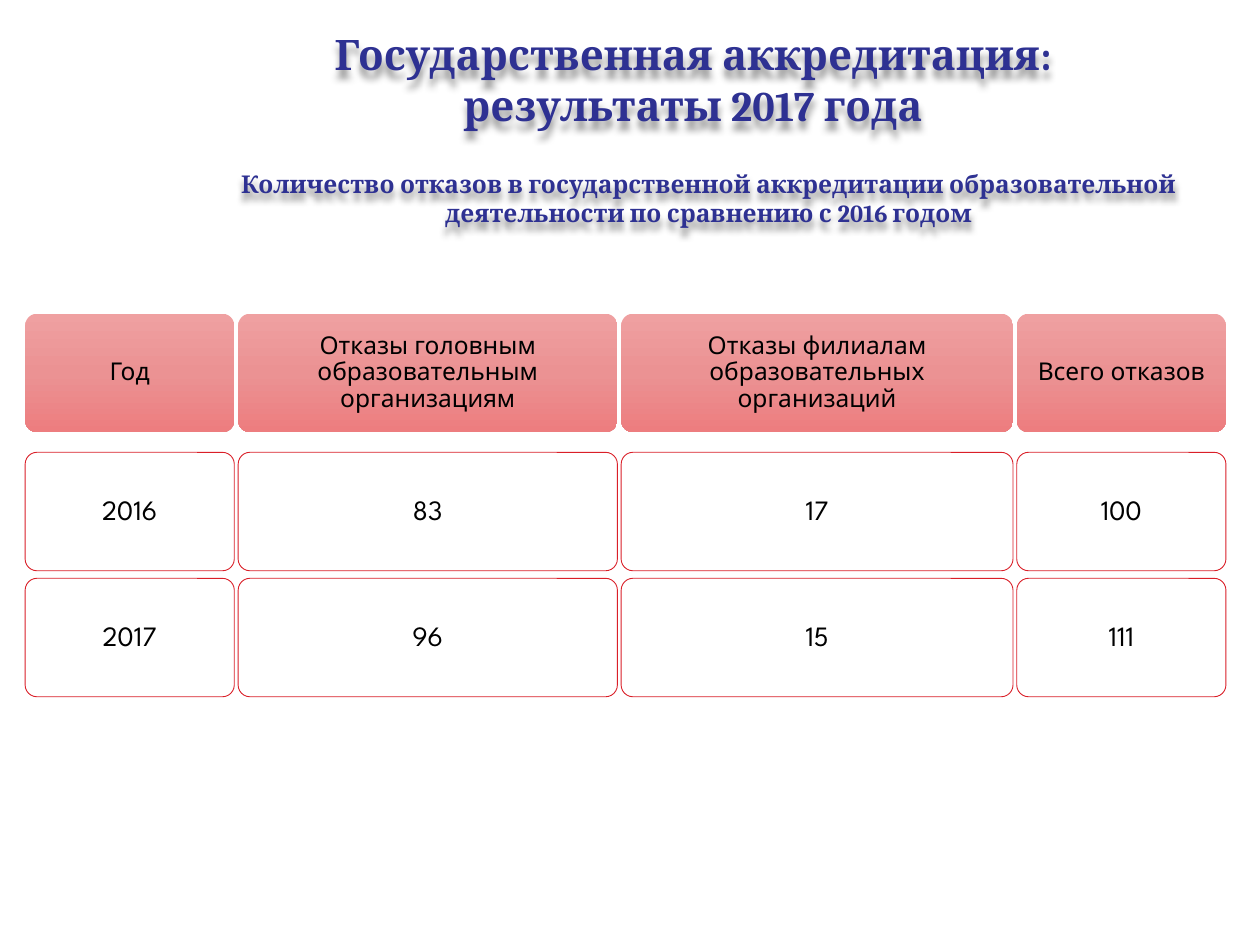
"""Build a slide comparing accreditation refusals in 2016 and 2017."""
import copy

import pptx
import pptx.dml.color
import pptx.enum.shapes
import pptx.enum.text
import pptx.oxml
import pptx.oxml.ns
import pptx.util

TITLE = "Государственная аккредитация: результаты 2017 года"
SUBTITLE = ("Количество отказов в государственной аккредитации образовательной "
            "деятельности по сравнению с 2016 годом")
HEADERS = ["Год", "Отказы головным образовательным организациям",
           "Отказы филиалам образовательных организаций", "Всего отказов"]
RECORDS = [["2016", "83", "17", "100"], ["2017", "96", "15", "111"]]

COLUMN_WIDTHS = [1.66, 3.01, 3.11, 1.66]
COLUMN_GAP = 0.03
GRID_LEFT = 0.2
ROW_TOPS = [2.49, 3.59, 4.59]
ROW_HEIGHT = 0.94
HEADER_STOPS = ["EFA0A1", "EB9293", "ED7D7F"]
NAVY, RED, WHITE, BLACK = "2E3192", "DA1F28", "FFFFFF", "000000"
HEADING_FONT, CELL_FONT = "Cambria", "League Spartan"
DRAWING = 'xmlns:a="http://schemas.openxmlformats.org/drawingml/2006/main"'
HEADING_SHADOW = (
    f'<a:effectLst {DRAWING}><a:outerShdw blurRad="50800" dist="50800" dir="5400000" '
    'algn="t" rotWithShape="0"><a:srgbClr val="000000"><a:alpha val="43000"/></a:srgbClr>'
    '</a:outerShdw></a:effectLst>')


def rgb(value):
    """Turn a hex string into a colour."""
    return pptx.dml.color.RGBColor.from_string(value)


def place(box, left, top, width, height):
    """Position a shape in inches."""
    box.left, box.top, box.width, box.height = map(
        pptx.util.Inches, (left, top, width, height))


def write(box, text, size, font, color, bold=False):
    """Fill a box with one centred run."""
    box.text_frame.word_wrap = True
    para = box.text_frame.paragraphs[0]
    para.alignment = pptx.enum.text.PP_ALIGN.CENTER
    span = para.add_run()
    span.text = text
    span.font.size = pptx.util.Pt(size)
    span.font.name = font
    span.font.bold = bold
    span.font.color.rgb = rgb(color)


def write_heading(box, text, size):
    """Write a bold heading with a soft shadow."""
    write(box, text, size, HEADING_FONT, NAVY, bold=True)
    box.text_frame.vertical_anchor = pptx.enum.text.MSO_ANCHOR.TOP
    box.text_frame.auto_size = pptx.enum.text.MSO_AUTO_SIZE.SHAPE_TO_FIT_TEXT
    box.fill.background()
    box.line.fill.background()
    box._element.spPr.append(pptx.oxml.parse_xml(HEADING_SHADOW))


def paint_header(cell):
    """Give a header cell its three-stop vertical gradient."""
    cell.fill.gradient()
    cell.fill.gradient_angle = 270
    stops = cell._element.spPr.find(".//" + pptx.oxml.ns.qn("a:gsLst"))
    stops.insert(1, copy.deepcopy(stops[0]))
    for index, (stop, color) in enumerate(zip(cell.fill.gradient_stops, HEADER_STOPS)):
        stop.position = index / 2
        stop.color.rgb = rgb(color)
    cell.line.fill.background()


def paint_value(cell):
    """Give a value cell a translucent white fill and a thin red outline."""
    cell.fill.solid()
    cell.fill.fore_color.rgb = rgb(WHITE)
    color = cell._element.spPr.find(".//" + pptx.oxml.ns.qn("a:srgbClr"))
    color.append(pptx.oxml.parse_xml(f'<a:alpha {DRAWING} val="90000"/>'))
    cell.line.color.rgb = rgb(RED)
    cell.line.width = pptx.util.Pt(0.5)


def add_cell(page, left, top, width, text, is_header):
    """Add one rounded cell with its text."""
    cell = page.shapes.add_shape(
        pptx.enum.shapes.MSO_SHAPE.ROUNDED_RECTANGLE, 0, 0, 0, 0)
    place(cell, left, top, width, ROW_HEIGHT)
    cell.adjustments[0] = 0.1
    cell.shadow.inherit = False
    (paint_header if is_header else paint_value)(cell)
    frame = cell.text_frame
    frame.margin_left = frame.margin_right = pptx.util.Inches(0.04)
    frame.margin_top = frame.margin_bottom = pptx.util.Inches(0.03)
    frame.vertical_anchor = pptx.enum.text.MSO_ANCHOR.MIDDLE
    write(cell, text, 14 if is_header else 16, CELL_FONT, BLACK)
    frame.paragraphs[0].line_spacing = 0.9


def main():
    """Assemble and save the deck."""
    deck = pptx.Presentation()
    deck.slide_width = pptx.util.Inches(10)
    deck.slide_height = pptx.util.Inches(7.5)
    page = deck.slides.add_slide(deck.slide_layouts[5])

    title = page.shapes.title
    place(title, 2.27, 0.18, 6.46, 0.91)
    write_heading(title, TITLE, 24)
    subtitle = page.shapes.add_textbox(0, 0, 0, 0)
    place(subtitle, 1.61, 1.29, 8.03, 0.57)
    write_heading(subtitle, SUBTITLE, 14)

    for row, (top, texts) in enumerate(zip(ROW_TOPS, [HEADERS] + RECORDS)):
        left = GRID_LEFT
        for width, text in zip(COLUMN_WIDTHS, texts):
            add_cell(page, left, top, width, text, row == 0)
            left += width + COLUMN_GAP

    deck.save("out.pptx")


if __name__ == "__main__":
    main()
